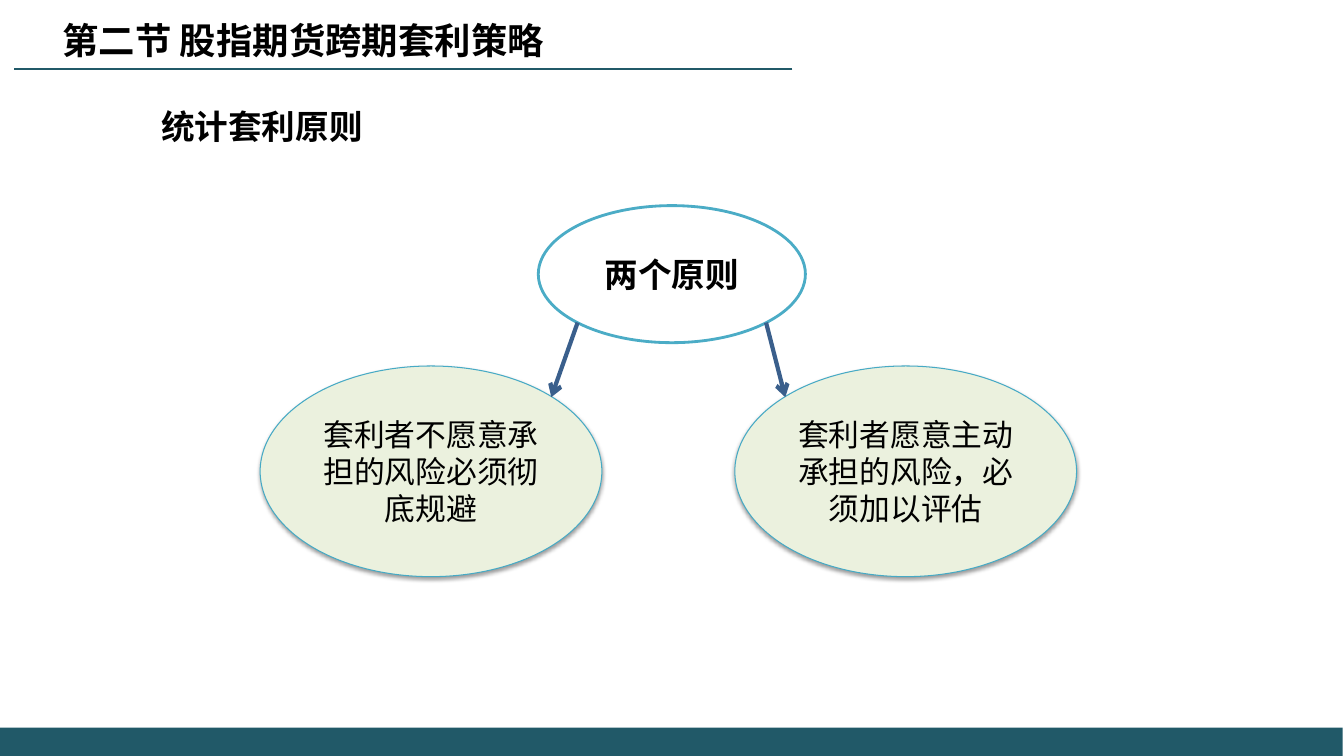
from lxml import etree
from pptx import Presentation
from pptx import util as u
from pptx.dml.color import RGBColor
from pptx.enum import shapes, text
from pptx.oxml import ns

BLACK = RGBColor(0x00, 0x00, 0x00)
TEAL = RGBColor(0x21, 0x59, 0x68)
AQUA = RGBColor(0x4B, 0xAC, 0xC6)
RIM = RGBColor(0x46, 0xAA, 0xC5)
PALE = RGBColor(0xEB, 0xF1, 0xDE)
BLUE = RGBColor(0x3A, 0x5F, 0x8C)
HAN = "Noto Sans CJK SC"
ROMAN = "Times New Roman"


def add(parent, tag, **attrs):
    node = etree.SubElement(parent, ns.qn(tag))
    for key, value in attrs.items():
        node.set(key, str(value))
    return node


def write(shape, words, size, font=ROMAN, bold=False, wrap=True,
          align=text.PP_ALIGN.LEFT, anchor=text.MSO_ANCHOR.MIDDLE,
          lines=1.0, indent=0):
    frame = shape.text_frame
    frame.auto_size = text.MSO_AUTO_SIZE.NONE
    frame.word_wrap = wrap
    frame.vertical_anchor = anchor
    para = frame.paragraphs[0]
    para.alignment = align
    para.line_spacing = lines
    if indent:
        para._p.get_or_add_pPr().set("indent", str(u.Pt(indent)))
    run = para.add_run()
    run.text = words
    run.font.size = u.Pt(size)
    run.font.bold = bold
    run.font.name = font
    run.font.color.rgb = BLACK
    add(run._r.get_or_add_rPr(), "a:ea", typeface=HAN)


class Deck:
    def __init__(self, width, height):
        self.file = Presentation()
        self.file.slide_width = u.Pt(width)
        self.file.slide_height = u.Pt(height)
        self.slide = self.file.slides.add_slide(self.file.slide_layouts[5])

    def title(self, words, box):
        head = self.slide.shapes.title
        head.left, head.top, head.width, head.height = map(u.Pt, box)
        write(head, words, 26, font=HAN, bold=True, wrap=False)

    def label(self, words, box, **style):
        write(self.slide.shapes.add_textbox(*map(u.Pt, box)), words, **style)

    def form(self, kind, box, fill=None, rim=None, width=1.0, shade=False):
        shape = self.slide.shapes.add_shape(kind, *map(u.Pt, box))
        shape.shadow.inherit = False
        if fill is None:
            shape.fill.background()
        else:
            shape.fill.solid()
            shape.fill.fore_color.rgb = fill
        if rim is None:
            shape.line.fill.background()
        else:
            shape.line.color.rgb = rim
            shape.line.width = u.Pt(width)
        if shade:
            glow = add(shape._element.spPr.find(ns.qn("a:effectLst")), "a:outerShdw",
                       blurRad=u.Pt(3.1), dist=u.Pt(1.6), dir=5400000, rotWithShape=0)
            add(add(glow, "a:srgbClr", val="000000"), "a:alpha", val=38000)
        return shape

    def oval(self, words, box, size, bold=False, **style):
        shape = self.form(shapes.MSO_SHAPE.OVAL, box, **style)
        write(shape, words, size, bold=bold, align=text.PP_ALIGN.CENTER)

    def line(self, start, end, color, width, arrow=False):
        link = self.slide.shapes.add_connector(
            shapes.MSO_CONNECTOR.STRAIGHT, *map(u.Pt, start + end))
        link.line.color.rgb = color
        link.line.width = u.Pt(width)
        if arrow:
            add(link.line._get_or_add_ln(), "a:tailEnd", type="arrow")
        add(link._element.spPr, "a:effectLst")


def main():
    deck = Deck(960, 540)
    deck.form(shapes.MSO_SHAPE.RECTANGLE, (0, 519.8, 959, 20.2), fill=TEAL)
    deck.line((566, 49), (10, 49), TEAL, 1.5)
    deck.title("第二节 股指期货跨期套利策略", (37.4, 9.4, 415.4, 38.9))
    deck.label("统计套利原则", (72, 54.7, 406, 80), size=24, bold=True,
               anchor=text.MSO_ANCHOR.TOP, lines=1.6, indent=36)
    deck.oval("两个原则", (384.5, 146.9, 190.8, 97.9), 24, bold=True,
              rim=AQUA, width=2)
    rules = (
        ("套利者不愿意承担的风险必须彻底规避", 185.8, 412.6, 393.8),
        ("套利者愿意主动承担的风险，必须加以评估", 524.9, 547.2, 560.9),
    )
    for words, left, start, end in rules:
        deck.oval(words, (left, 261.4, 244.1, 150.5), 22, fill=PALE,
                  rim=RIM, width=0.75, shade=True)
        deck.line((start, 230.4), (end, 283.7), BLUE, 3, arrow=True)
    deck.file.save("out.pptx")


if __name__ == "__main__":
    main()
